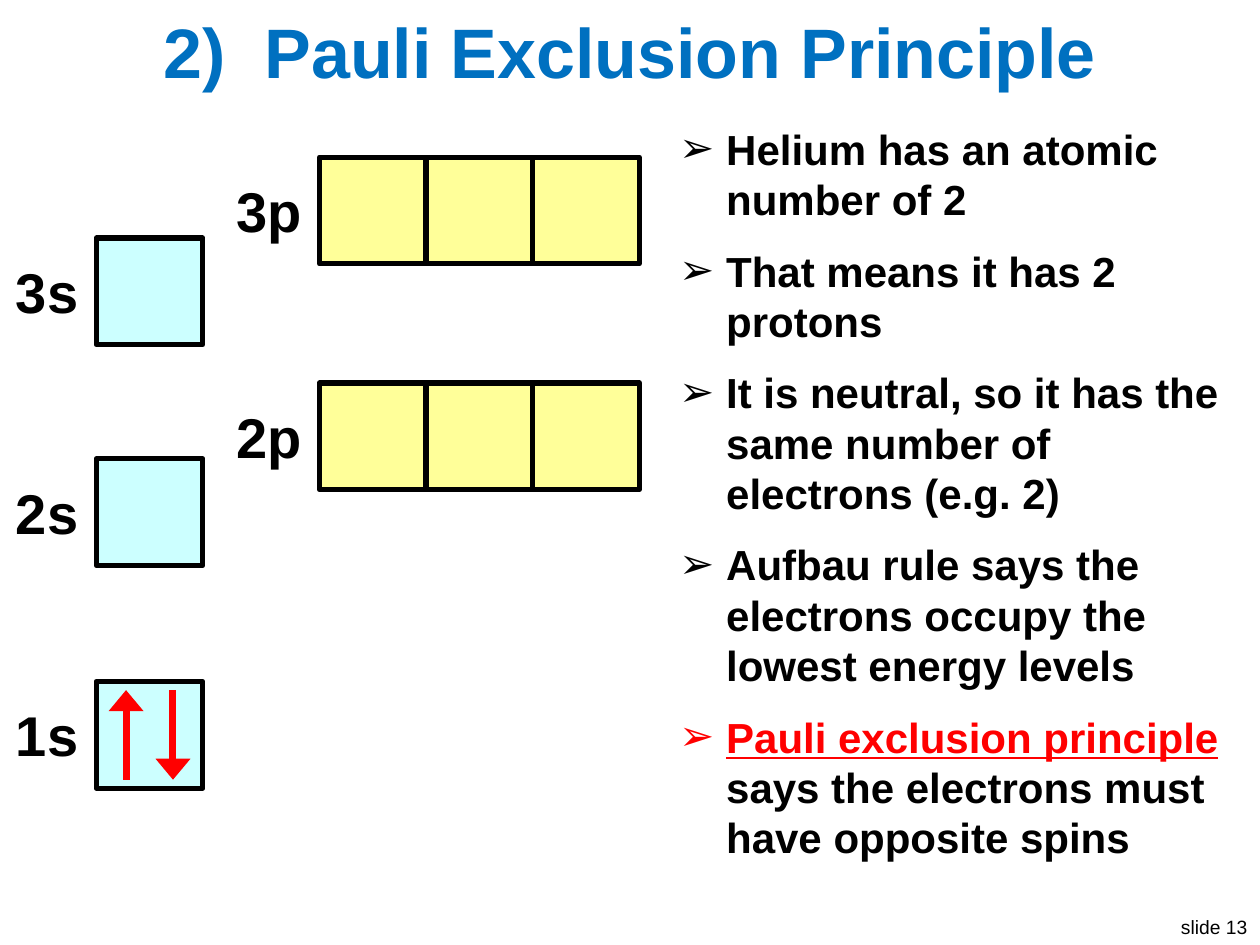
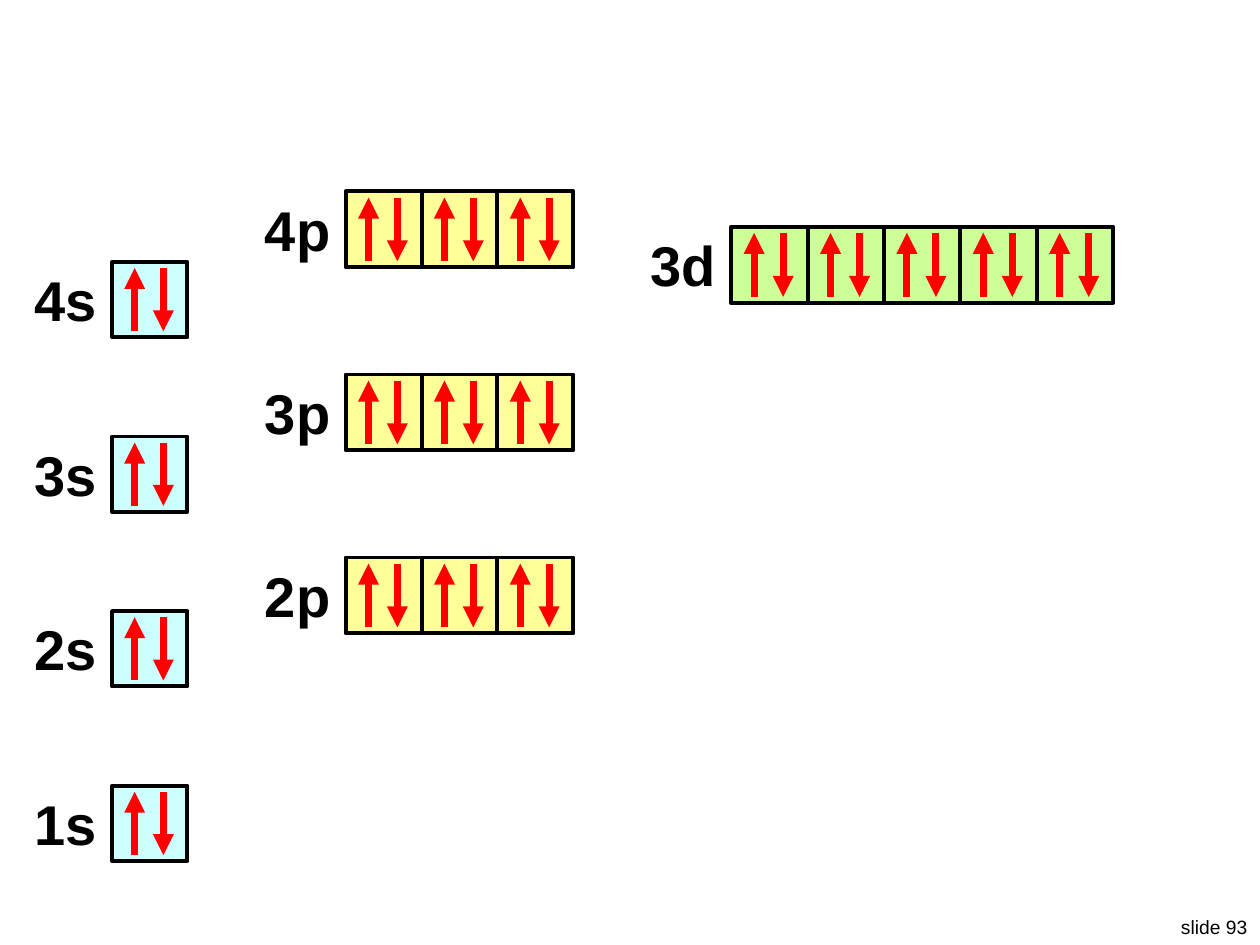
import pptx
import pptx.dml.color
import pptx.enum.shapes
import pptx.enum.text
import pptx.oxml
import pptx.oxml.ns
import pptx.util

Cm = pptx.util.Cm
Pt = pptx.util.Pt
Align = pptx.enum.text.PP_ALIGN

COLORS = {
    "text": "000000",
    "paper": "FFFFFF",
    "title": "0070C0",
    "accent": "FF0000",
    "s": "CCFFFF",
    "p": "FFFF99",
    "d": "CCFF99",
}
FORMATS = {
    "title": {"name": "Arial", "size": Pt(40), "bold": True},
    "point": {"name": "Arial", "size": Pt(24), "bold": True},
    "key": {"name": "Arial", "size": Pt(24), "bold": True, "underline": True},
    "label": {"name": "Arial", "size": Pt(32), "bold": True},
    "footer": {"name": "Arial", "size": Pt(11)},
}
PLACES = {
    "title": (0.51, 0, 24.38, 2.03),
    "points": (13.44, 2.36, 11.73, 15.37),
    "footer": (23.5, 18.32, 1.9, 0.74),
}
BOX_COUNTS = {"s": 1, "p": 3, "d": 5}
LABEL_WIDTHS = {"s": 1.78, "p": 1.84, "d": 1.84}
LABEL_HEIGHT = 1.62
SPIN_START, SPIN_END = 0.08, 0.92


def color(name):
    return pptx.dml.color.RGBColor.from_string(COLORS[name])


def element(tag, **attributes):
    node = pptx.oxml.parse_xml(f"<a:{tag} {pptx.oxml.ns.nsdecls('a')}/>")
    for key, value in attributes.items():
        node.set(key, str(value))
    return node


class OrbitalDeck:
    def __init__(self):
        self.deck = pptx.Presentation()
        self.deck.slide_width = Cm(25.4)
        self.deck.slide_height = Cm(19.05)
        self.slide = None

    def start(self, layout, number):
        self.slide = self.deck.slides.add_slide(self.deck.slide_layouts.get_by_name(layout))
        self.text(f"slide {number}", PLACES["footer"], "footer")

    def run(self, paragraph, wording, style, tint="text"):
        run = paragraph.add_run()
        run.text = wording
        for attribute, value in FORMATS[style].items():
            setattr(run.font, attribute, value)
        run.font.color.rgb = color(tint)

    def text(self, wording, place, style, backed=False):
        box = self.slide.shapes.add_textbox(*map(Cm, place))
        if backed:
            box.fill.solid()
            box.fill.fore_color.rgb = color("paper")
        box.text_frame.word_wrap = False
        paragraph = box.text_frame.paragraphs[0]
        paragraph.alignment = Align.RIGHT
        self.run(paragraph, wording, style)

    def title(self, wording):
        title = self.slide.shapes.title
        sides = ("left", "top", "width", "height")
        for side, length in zip(sides, PLACES["title"]):
            setattr(title, side, Cm(length))
        title.text_frame.vertical_anchor = pptx.enum.text.MSO_ANCHOR.MIDDLE
        paragraph = title.text_frame.paragraphs[0]
        paragraph.alignment = Align.CENTER
        self.run(paragraph, wording, "title", "title")

    def points(self, points):
        frame = self.slide.shapes.add_textbox(*map(Cm, PLACES["points"])).text_frame
        frame.word_wrap = True
        for index, runs in enumerate(points):
            paragraph = frame.add_paragraph() if index else frame.paragraphs[0]
            paragraph.space_before = Pt(12)
            properties = paragraph._p.get_or_add_pPr()
            properties.set("marL", str(Cm(0.95)))
            properties.set("indent", str(-Cm(0.95)))
            properties.append(element("buFont", typeface="Arial"))
            properties.append(element("buChar", char="➢"))
            for run in runs:
                self.run(paragraph, *run)

    def box(self, left, top, size, kind, border):
        box = self.slide.shapes.add_shape(
            pptx.enum.shapes.MSO_SHAPE.RECTANGLE, *map(Cm, (left, top, size, size)))
        box.shadow.inherit = False
        box.fill.solid()
        box.fill.fore_color.rgb = color(kind)
        box.line.color.rgb = color("text")
        box.line.width = Pt(border)

    def spin(self, x, start, end, head):
        arrow = self.slide.shapes.add_connector(
            pptx.enum.shapes.MSO_CONNECTOR.STRAIGHT, *map(Cm, (x, start, x, end)))
        arrow.line.color.rgb = color("accent")
        arrow.line.width = Pt(4)
        properties = arrow._element.spPr
        outline = properties.find(pptx.oxml.ns.qn("a:ln"))
        outline.append(element("tailEnd", type="triangle", w=head))
        properties.append(element("effectLst"))

    def electron_pair(self, left, top, size, tracks, head):
        up, down = (left + size * track for track in tracks)
        upper, lower = top + size * SPIN_START, top + size * SPIN_END
        self.spin(up, lower, upper, head)
        self.spin(down, upper, lower, head)

    def orbital(self, name, left, top, size, border, gap, tracks, head, backed, filled):
        kind = name[-1]
        width = LABEL_WIDTHS[kind]
        label_top = top + (size - LABEL_HEIGHT) / 2
        self.text(name, (left - gap - width, label_top, width, LABEL_HEIGHT), "label", backed)
        lefts = [left + size * index for index in range(BOX_COUNTS[kind])]
        for box_left in lefts:
            self.box(box_left, top, size, kind, border)
        if filled:
            for box_left in lefts:
                self.electron_pair(box_left, top, size, tracks, head)


def pauli_slide(deck):
    deck.start("Title Only", 13)
    look = {"size": 2.15, "border": 3, "gap": 0.11, "tracks": (0.28, 0.72),
            "head": "lg", "backed": True}
    orbitals = [
        ("3s", 1.94, 4.8), ("2s", 1.94, 9.25), ("1s", 1.94, 13.74),
        ("3p", 6.44, 3.17), ("2p", 6.44, 7.72),
    ]
    for name, left, top in orbitals:
        deck.orbital(name, left, top, filled=name == "1s", **look)
    deck.title("2)  Pauli Exclusion Principle")
    facts = [
        "Helium has an atomic number of 2",
        "That means it has 2 protons",
        "It is neutral, so it has the same number of electrons (e.g. 2)",
        "Aufbau rule says the electrons occupy the lowest energy levels",
    ]
    principle = [
        ("Pauli exclusion principle", "key", "accent"),
        (" says the electrons must have opposite spins", "point"),
    ]
    deck.points([[(fact, "point")] for fact in facts] + [principle])


def filled_levels_slide(deck):
    deck.start("Blank", 93)
    look = {"border": 2.25, "gap": 0.06, "tracks": (0.3, 0.68),
            "head": "med", "backed": False}
    columns = [
        (("4s", "3s", "2s", "1s"), 2.26, 5.28, 3.52, 1.52),
        (("4p", "3p", "2p"), 6.97, 3.86, 3.69, 1.53),
        (("3d",), 14.74, 4.57, 0, 1.54),
    ]
    for names, left, top, step, size in columns:
        for level, name in enumerate(names):
            deck.orbital(name, left, top + step * level, size, filled=True, **look)


def main():
    deck = OrbitalDeck()
    pauli_slide(deck)
    filled_levels_slide(deck)
    deck.deck.save("out.pptx")


if __name__ == "__main__":
    main()
